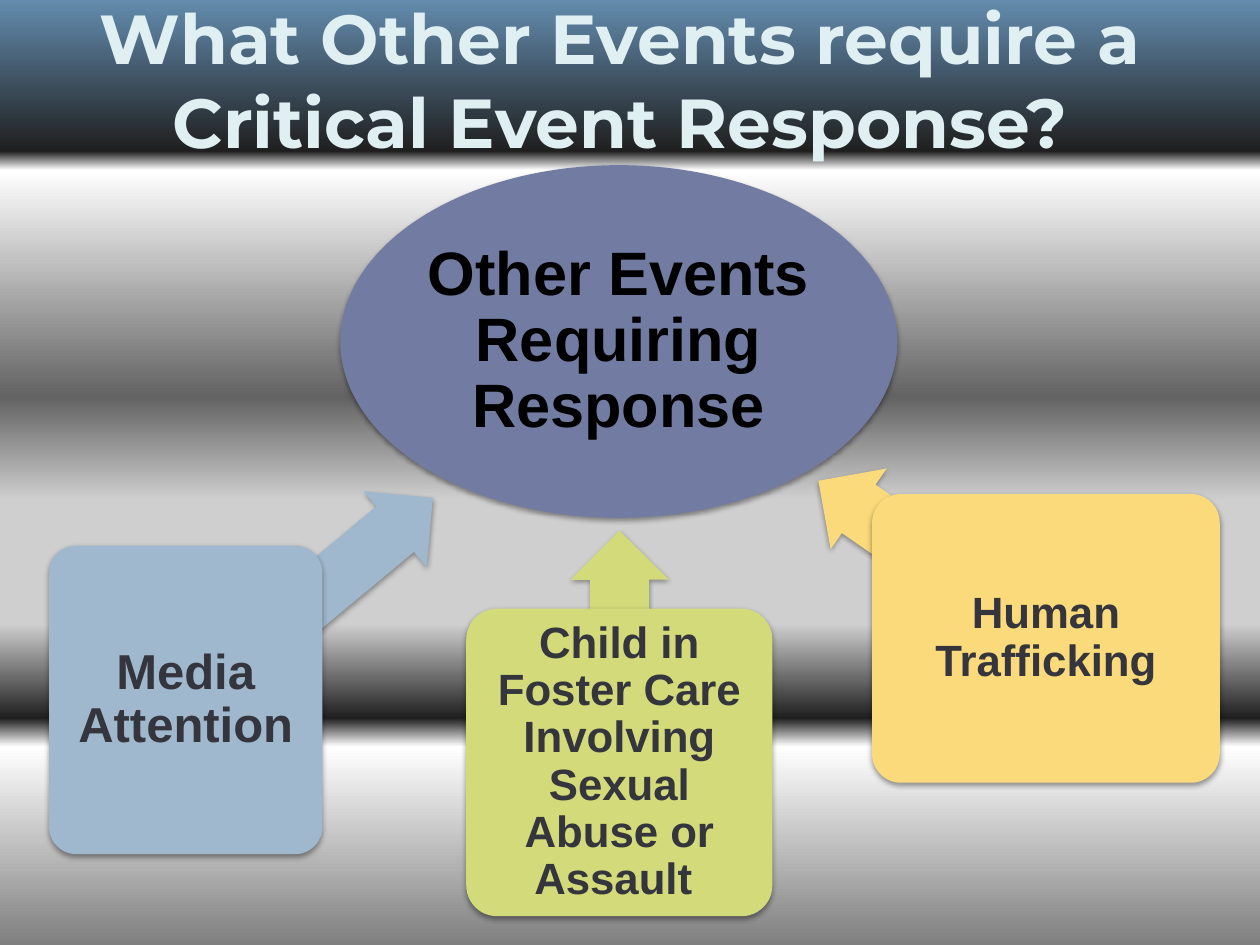
"""Build the slide on other events that require a critical event response."""
from lxml.etree import SubElement
from pptx import Presentation
from pptx.dml.color import RGBColor
from pptx.enum.shapes import MSO_SHAPE
from pptx.enum.text import MSO_ANCHOR, PP_ALIGN
from pptx.oxml.ns import qn
from pptx.util import Cm, Pt

TITLE = "What Other Events require a Critical Event Response?"
HUB = "Other Events Requiring Response"
STOPS = [(0, "638CAE"), (16, "1F1F1F"), (18, "FFFFFF"), (42, "636363"), (53, "CFCFCF"),
         (66, "CFCFCF"), (76, "1F1F1F"), (79, "FFFFFF"), (100, "7F7F7F")]
EVENTS = [
    {"text": "Media Attention", "size": 28, "fill": "9FB8CD", "turn": 140.3,
     "arrow": (2.95, 11.13, 6.53, 1.98), "box": (0.99, 11, 5.51, 6.22)},
    {"text": "Child in Foster Care Involving Sexual Abuse or Assault ", "size": 25,
     "fill": "D2DA7A", "turn": 89.8,
     "arrow": (10.16, 12.04, 4.67, 1.98), "box": (9.4, 12.27, 6.17, 6.2)},
    {"text": "Human Trafficking", "size": 25, "fill": "FADA7A", "turn": 34.8,
     "arrow": (16, 10.29, 5.56, 1.98), "box": (17.58, 9.96, 7.01, 5.82)},
]


def color(code):
    return RGBColor.from_string(code)


def paint(slide, stops):
    fill = slide.background.fill
    fill.gradient()
    fill.gradient_angle = 270
    group = slide.background._cSld.find(".//" + qn("a:gsLst"))
    for old in list(group):
        group.remove(old)
    for place, code in stops:
        stop = SubElement(group, qn("a:gs"), pos=str(place * 1000))
        SubElement(stop, qn("a:srgbClr"), val=code)


def shade(shape, alpha):
    shape.shadow.inherit = False
    effects = shape._element.spPr.find(qn("a:effectLst"))
    outer = SubElement(effects, qn("a:outerShdw"), blurRad=str(Pt(3.1)), dist=str(Pt(1.6)),
                       dir="5400000", algn="ctr", rotWithShape="0")
    tint = SubElement(outer, qn("a:srgbClr"), val="000000")
    SubElement(tint, qn("a:alpha"), val=str(alpha * 1000))


def draw(slide, kind, frame, fill, alpha=38):
    shape = slide.shapes.add_shape(kind, *map(Cm, frame))
    shape.fill.solid()
    shape.fill.fore_color.rgb = color(fill)
    shape.line.fill.background()
    shade(shape, alpha)
    return shape


def write(shape, text, size, code, name="Arial", inset=None, spacing=0.9):
    frame = shape.text_frame
    frame.text = text
    frame.word_wrap = True
    frame.vertical_anchor = MSO_ANCHOR.MIDDLE
    if inset is not None:
        frame.margin_left = frame.margin_right = Cm(inset)
        frame.margin_top = frame.margin_bottom = Cm(inset)
    line = frame.paragraphs[0]
    line.alignment = PP_ALIGN.CENTER
    line.line_spacing = spacing
    font = line.runs[0].font
    font.name, font.size, font.bold = name, Pt(size), True
    font.color.rgb = color(code)


def main():
    deck = Presentation()
    deck.slide_width, deck.slide_height = Cm(25.4), Cm(19.05)
    slide = deck.slides.add_slide(deck.slide_layouts[6])
    paint(slide, STOPS)

    title = slide.shapes.add_textbox(*map(Cm, (1.07, 0, 22.86, 3.18)))
    write(title, TITLE, 39.6, "DFEFF2", "Montserrat", spacing=1.0)

    hub = draw(slide, MSO_SHAPE.OVAL, (6.86, 3.33, 11.23, 7.11), "727CA3")
    write(hub, HUB, 35, "000000", inset=0.05)

    for event in EVENTS:
        arrow = draw(slide, MSO_SHAPE.LEFT_ARROW, event["arrow"], event["fill"], 35)
        arrow.adjustments[0] = 0.6
        arrow.rotation = event["turn"]
        box = draw(slide, MSO_SHAPE.ROUNDED_RECTANGLE, event["box"], event["fill"])
        box.adjustments[0] = 0.1
        write(box, event["text"], event["size"], "35353E", inset=0.14)

    deck.save("out.pptx")


if __name__ == "__main__":
    main()
